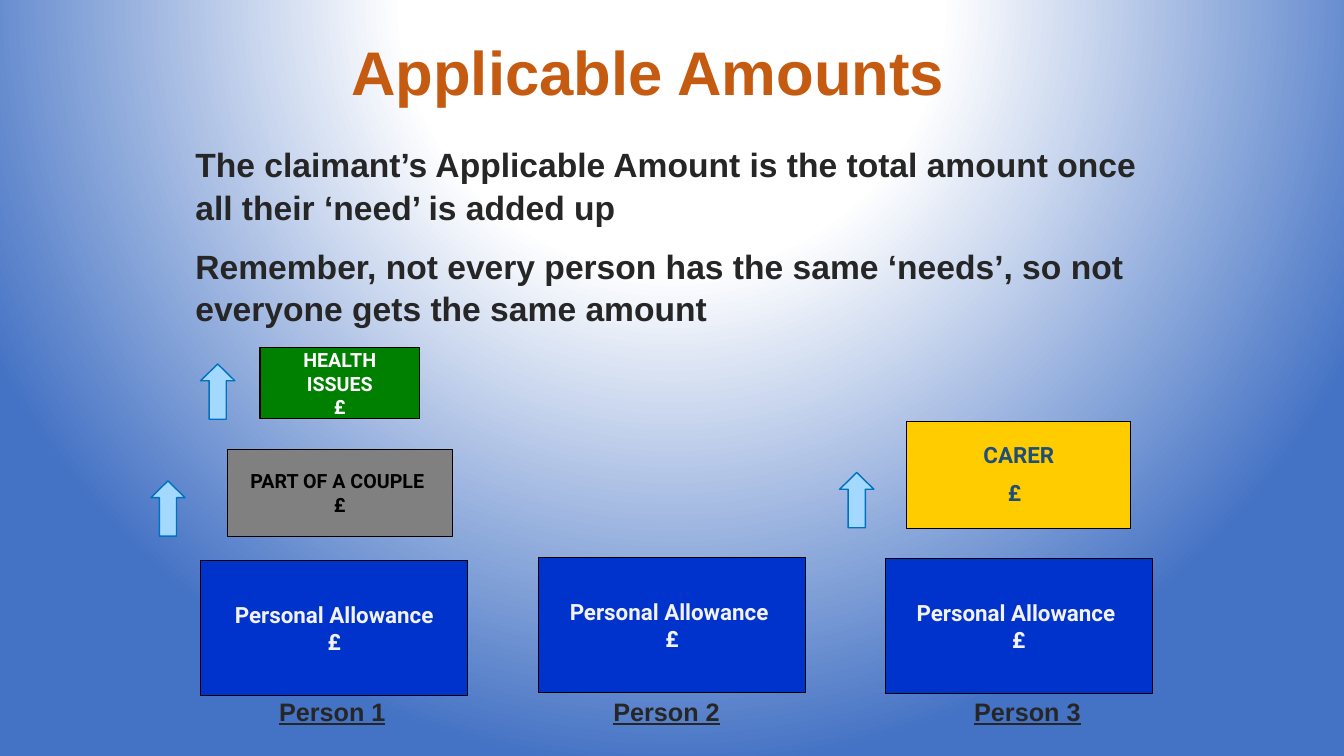
import pptx
import pptx.util
import pptx.oxml
from dataclasses import dataclass
from pptx.dml.color import RGBColor
from pptx.enum.shapes import MSO_SHAPE
from pptx.enum.text import MSO_ANCHOR, MSO_AUTO_SIZE, PP_ALIGN

Pt = pptx.util.Pt


@dataclass(frozen=True)
class Theme:
    head: str = "C55A11"
    ink: str = "262626"
    black: str = "000000"
    white: str = "FFFFFF"
    pale: str = "F2F2F2"
    navy: str = "1F4E79"
    blue: str = "0033CC"
    grey: str = "808080"
    green: str = "008000"
    gold: str = "FFCC00"
    sky: str = "A3D8FF"
    edge: str = "0070C0"
    glow: str = "4472C4"
    sans: str = "Arial"
    block: str = "Roboto"
    title: int = 44
    body: int = 24
    label: int = 18
    large: int = 16
    small: int = 14


T = Theme()


def rgb(code):
    return RGBColor.from_string(code)


def write(frame, lines, size, color, font=T.sans, align=PP_ALIGN.LEFT,
          anchor=MSO_ANCHOR.TOP, wrap=True, under=None, space=None, gap=0, tail=None):
    """Write one paragraph per line; tail is the size of a closing space."""
    frame.auto_size = MSO_AUTO_SIZE.NONE
    frame.word_wrap = wrap
    frame.vertical_anchor = anchor
    for i, line in enumerate(lines):
        para = frame.add_paragraph() if i else frame.paragraphs[0]
        para.alignment = align
        para.line_spacing = space
        if i and gap:
            para.space_before = Pt(gap)
        parts = [(line, size)]
        if tail and i == len(lines) - 1:
            parts.append((" ", tail))
        for text, points in parts:
            run = para.add_run()
            run.text = text
            run.font.size = Pt(points)
            run.font.name = font
            run.font.bold = True
            run.font.underline = under
            run.font.color.rgb = rgb(color)


def shape(slide, kind, box, fill, line, width):
    item = slide.shapes.add_shape(kind, *map(Pt, box))
    item.shadow.inherit = False
    item.fill.solid()
    item.fill.fore_color.rgb = rgb(fill)
    item.line.color.rgb = rgb(line)
    item.line.width = Pt(width)
    return item


def block(slide, box, lines, fill, color, size, tail=None):
    item = shape(slide, MSO_SHAPE.RECTANGLE, box, fill, T.black, 0.75)
    write(item.text_frame, lines, size, color, font=T.block, align=PP_ALIGN.CENTER,
          anchor=MSO_ANCHOR.MIDDLE, wrap=False, tail=tail)


def arrow(slide, left, top):
    item = shape(slide, MSO_SHAPE.UP_ARROW, (left, top, 24.5, 39.5), T.sky, T.edge, 1)
    item.adjustments[1] = 0.49


def note(slide, box, lines, size, **style):
    item = slide.shapes.add_textbox(*map(Pt, box))
    write(item.text_frame, lines, size, T.ink, space=1.05, **style)


def glow(slide):
    """Circular gradient centred above the slide."""
    stops = "".join(
        f'<a:gs pos="{pos * 1000}"><a:srgbClr val="{code}"/></a:gs>'
        for pos, code in ((0, T.white), (35, T.white), (100, T.glow)))
    names = " ".join(pptx.oxml.ns.nsdecls(key) for key in "pa")
    slide.element.cSld.insert(0, pptx.oxml.parse_xml(
        f'<p:bg {names}><p:bgPr><a:gradFill rotWithShape="1"><a:gsLst>{stops}</a:gsLst>'
        '<a:path path="circle"><a:fillToRect l="50000" t="-80000" r="50000" b="180000"/>'
        '</a:path></a:gradFill><a:effectLst/></p:bgPr></p:bg>'))


def header(slide, box):
    title = slide.shapes.title
    title.left, title.top, title.width, title.height = map(Pt, box)
    write(title.text_frame, ["Applicable Amounts"], T.title, T.head,
          align=PP_ALIGN.CENTER, space=0.9)


def person(slide, box, name, shift, base="Personal Allowance "):
    """Base allowance with the person's name below."""
    left, top, width, height = box
    block(slide, box, [base, "£"], T.blue, T.pale, T.large)
    note(slide, (left + shift, 492.5, 115, 29), [name], T.label, under=True)


def couple(slide, box):
    """Needs stacked on the first person's allowance."""
    left, top, width, height = box
    block(slide, (left + 19.25, top - 79.5, 160.5, 62), ["PART OF A COUPLE ", "£"],
          T.grey, T.black, T.small)
    block(slide, (left + 42.5, top - 152, 114, 50.5), ["HEALTH", "ISSUES", "£"],
          T.green, T.white, T.small)
    arrow(slide, left - 35.5, top - 57)
    arrow(slide, left, top - 140.5)


def carer(slide, box):
    """Need stacked on the third person's allowance."""
    left, top, width, height = box
    block(slide, (left + 15.5, top - 98, 160, 76.5), ["CARER", "£"],
          T.gold, T.navy, T.large, tail=24)
    arrow(slide, left - 32.5, top - 61.5)


def main():
    deck = pptx.Presentation()
    deck.slide_width, deck.slide_height = Pt(960), Pt(540)
    slide = deck.slides.add_slide(deck.slide_layouts[5])
    glow(slide)

    # Title and explanation
    header(slide, (49, 26.5, 828, 104.5))
    note(slide, (132.5, 98, 708.5, 138), [
        "The claimant’s Applicable Amount is the total amount once all their ‘need’ is added up",
        "Remember, not every person has the same ‘needs’, so not everyone gets the same amount",
    ], T.body, gap=12)

    # Three people and their needs
    first, second, third = ((left, top, 191, 96.5) for left, top in
                            ((143.25, 400.5), (384.5, 398.5), (632.25, 399)))
    person(slide, first, "Person 1", 49, base="Personal Allowance")
    person(slide, second, "Person 2", 46.5)
    person(slide, third, "Person 3", 56.5)
    couple(slide, first)
    carer(slide, third)

    deck.save("out.pptx")


if __name__ == "__main__":
    main()
